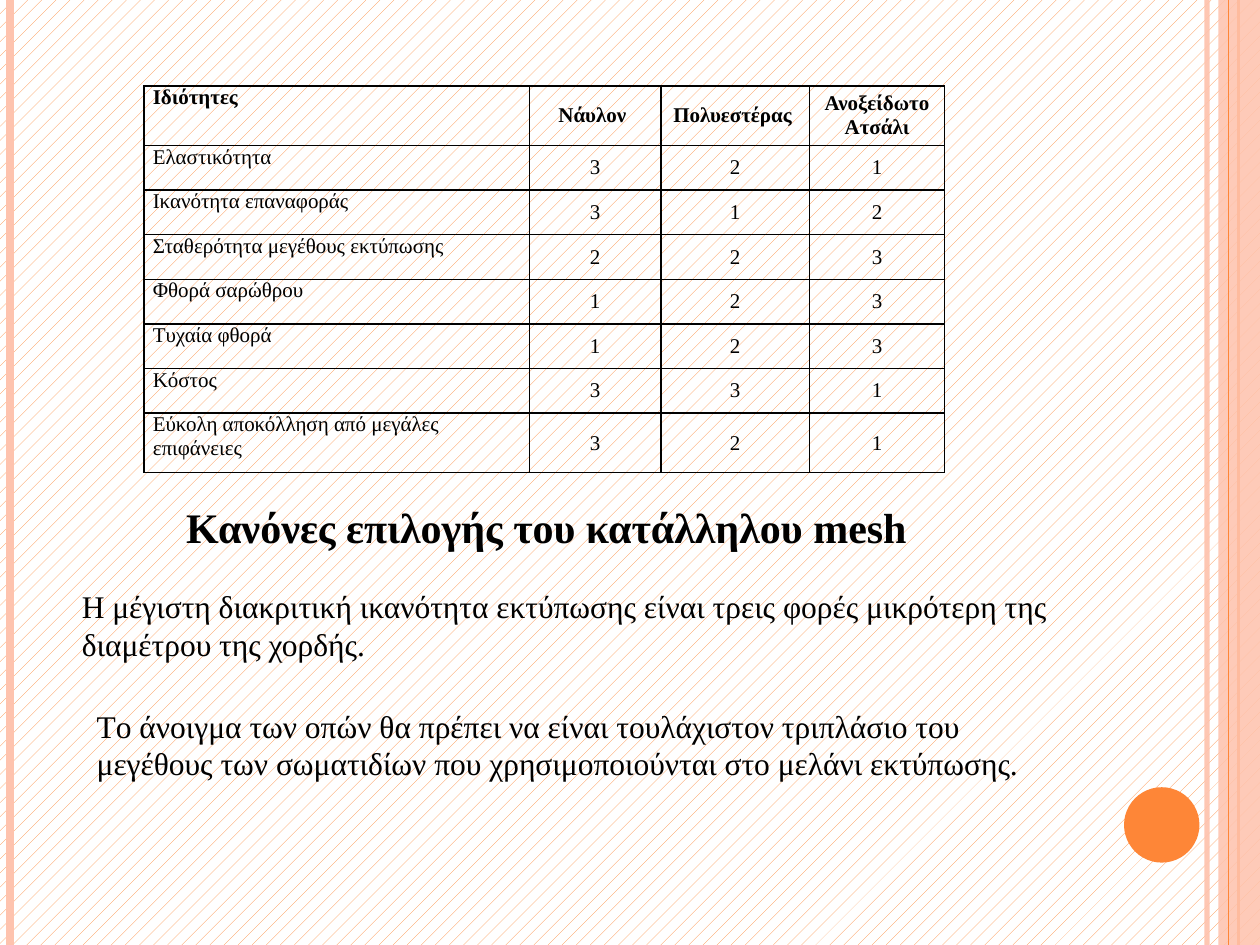
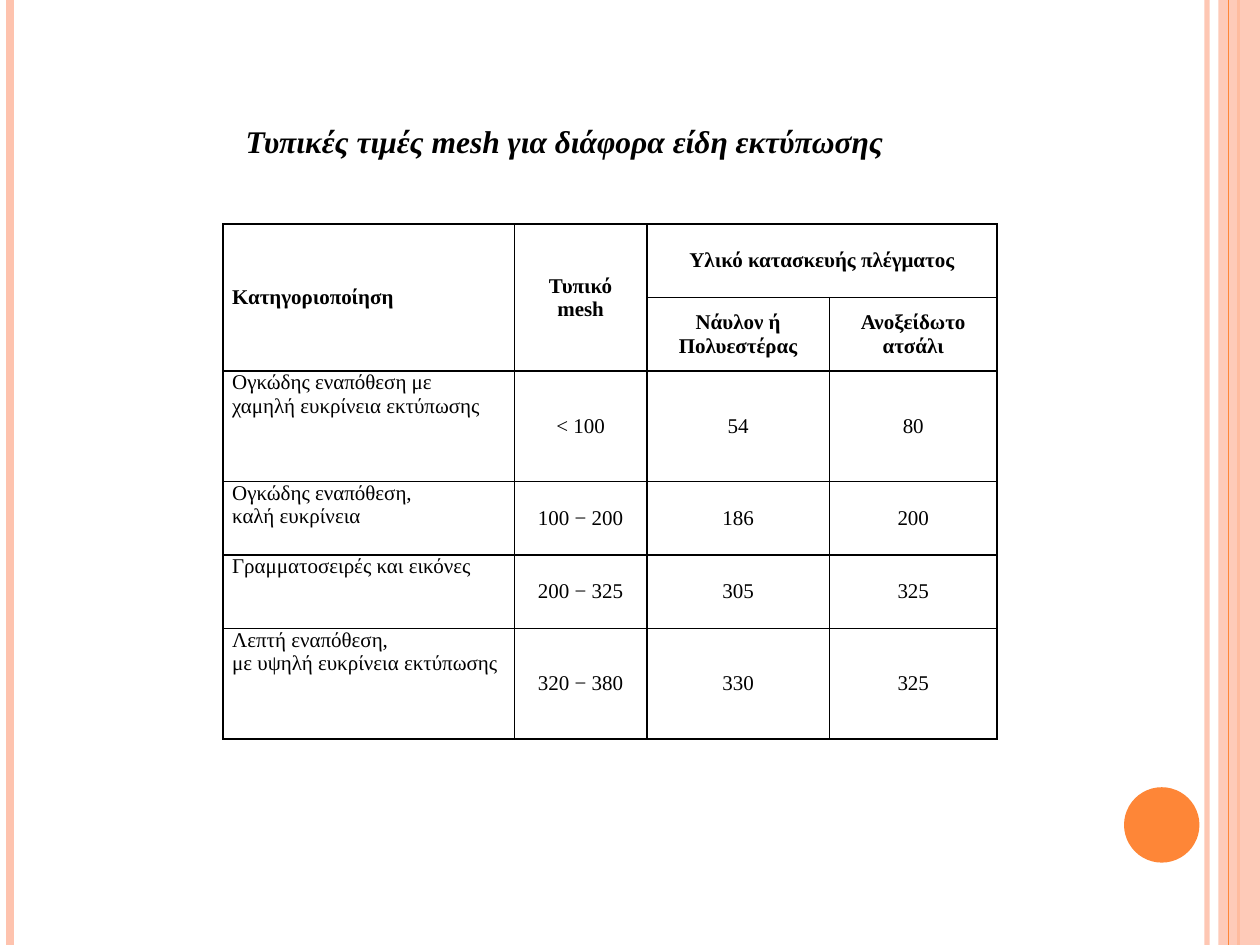
from pptx import Presentation
from pptx.dml.color import RGBColor
from pptx.enum.dml import MSO_PATTERN
from pptx.enum.shapes import MSO_CONNECTOR, MSO_SHAPE
from pptx.enum.text import MSO_ANCHOR, MSO_AUTO_SIZE, PP_ALIGN
from pptx.oxml.ns import qn
from pptx.util import Cm, Pt
from lxml.etree import SubElement

FONT = "Times New Roman"
BLACK = RGBColor(0x00, 0x00, 0x00)
WHITE = RGBColor(0xFF, 0xFF, 0xFF)
PEACH = RGBColor(0xFE, 0xC3, 0xAE)
ORANGE = RGBColor(0xFE, 0x86, 0x37)
WIDTH, HEIGHT = 25.4, 19.05
TITLE_ONLY = 5


class Deck:
    def __init__(self):
        self.prs = Presentation()
        self.prs.slide_width = Cm(WIDTH)
        self.prs.slide_height = Cm(HEIGHT)
        self.slide = None

    def page(self):
        self.slide = self.prs.slides.add_slide(self.prs.slide_layouts[TITLE_ONLY])
        self.rule(24.33, PEACH, 3, 93)
        self.rule(0.2, PEACH, 4.5)
        self.rule(24.97, ORANGE, 1.5)
        self.shape(MSO_SHAPE.RECTANGLE, 24.56, 0, 0.84, HEIGHT, PEACH, 87)
        self.rule(24.77, ORANGE, 0.75)
        self.shape(MSO_SHAPE.OVAL, 22.66, 15.87, 1.52, 1.52, ORANGE)

    def hatch(self):
        fill = self.slide.background.fill
        fill.patterned()
        fill.pattern = MSO_PATTERN.PERCENT_10
        fill.fore_color.rgb = ORANGE
        fill.back_color.rgb = WHITE

    def fade(self, item, alpha):
        if alpha < 100:
            color = next(item.iter(qn("a:srgbClr")))
            SubElement(color, qn("a:alpha"), val=str(alpha * 1000))

    def rule(self, left, color, width, alpha=100):
        line = self.slide.shapes.add_connector(
            MSO_CONNECTOR.STRAIGHT, Cm(left), 0, Cm(left), Cm(HEIGHT))
        line.line.color.rgb = color
        line.line.width = Pt(width)
        props = line._element.spPr
        self.fade(props, alpha)
        SubElement(props, qn("a:effectLst"))

    def shape(self, kind, left, top, width, height, color, alpha=100):
        shape = self.slide.shapes.add_shape(
            kind, Cm(left), Cm(top), Cm(width), Cm(height))
        shape.shadow.inherit = False
        shape.fill.solid()
        shape.fill.fore_color.rgb = color
        shape.line.fill.background()
        self.fade(shape._element.spPr, alpha)

    def style(self, frame, size, bold=False, italic=False, align=PP_ALIGN.LEFT):
        for para in frame.paragraphs:
            para.alignment = align
            for run in para.runs:
                font = run.font
                font.name, font.size = FONT, Pt(size)
                font.bold, font.italic = bold, italic
                font.color.rgb = BLACK

    def title(self, text, left, top, width, height, size, italic=False):
        title = self.slide.shapes.title
        title.left, title.top = Cm(left), Cm(top)
        title.width, title.height = Cm(width), Cm(height)
        frame = title.text_frame
        frame.text = text
        frame.word_wrap = False
        frame.auto_size = MSO_AUTO_SIZE.NONE
        frame.vertical_anchor = MSO_ANCHOR.TOP
        self.style(frame, size, True, italic)

    def text(self, text, left, top, width, height):
        box = self.slide.shapes.add_textbox(
            Cm(left), Cm(top), Cm(width), Cm(height))
        frame = box.text_frame
        frame.text = text
        frame.word_wrap = True
        self.style(frame, 18)

    def border(self, cell):
        props = cell._tc.get_or_add_tcPr()
        for spot, side in enumerate(("a:lnL", "a:lnR", "a:lnT", "a:lnB")):
            line = SubElement(props, qn(side), w=str(Pt(1)))
            fill = SubElement(line, qn("a:solidFill"))
            SubElement(fill, qn("a:srgbClr"), val=str(BLACK))
            props.insert(spot, line)

    def table(self, left, top, cols, rows, data, heads=1, spans=()):
        table = self.slide.shapes.add_table(
            len(rows), len(cols), Cm(left), Cm(top),
            Cm(sum(cols)), Cm(sum(rows))).table
        table.first_row = table.horz_banding = False
        for col, width in zip(table.columns, cols):
            col.width = Cm(width)
        for row, height in zip(table.rows, rows):
            row.height = Cm(height)
        for start, end in spans:
            table.cell(*start).merge(table.cell(*end))
        for r, line in enumerate(data):
            for c, text in enumerate(line):
                self.cell(table.cell(r, c), text, r < heads, c > 0)

    def cell(self, cell, text, bold, center):
        cell.fill.background()
        self.border(cell)
        cell.margin_left = cell.margin_right = Cm(0.18)
        cell.margin_top = cell.margin_bottom = 0
        middle = center or cell.is_merge_origin
        cell.vertical_anchor = MSO_ANCHOR.MIDDLE if middle else MSO_ANCHOR.TOP
        if text:
            cell.text_frame.text = text
            align = PP_ALIGN.CENTER if center else PP_ALIGN.LEFT
            self.style(cell.text_frame, 12, bold, align=align)


def rank(deck):
    deck.page()
    deck.hatch()
    deck.table(2.9, 1.73, (7.77, 2.65, 3, 2.72), (1.2, *[0.9] * 6, 1.2), (
        ("Ιδιότητες", "Νάυλον ", "Πολυεστέρας ", "Ανοξείδωτο Ατσάλι"),
        ("Ελαστικότητα", "3", "2", "1"),
        ("Ικανότητα επαναφοράς", "3", "1", "2"),
        ("Σταθερότητα μεγέθους εκτύπωσης", "2", "2", "3"),
        ("Φθορά σαρώθρου", "1", "2", "3"),
        ("Τυχαία φθορά", "1", "2", "3"),
        ("Κόστος", "3", "3", "1"),
        ("Εύκολη αποκόλληση από μεγάλες επιφάνειες", "3", "2", "1"),
    ))
    deck.title("Κανόνες επιλογής του κατάλληλου mesh", 3.5, 9.98, 15.19, 1.27, 24)
    deck.text("H μέγιστη διακριτική ικανότητα εκτύπωσης είναι τρεις φορές "
              "μικρότερη της διαμέτρου της χορδής.", 1.4, 11.71, 20.6, 1.8)
    deck.text("Tο άνοιγμα των οπών θα πρέπει να είναι τουλάχιστον τριπλάσιο του "
              "μεγέθους των σωματιδίων που χρησιμοποιούνται στο μελάνι "
              "εκτύπωσης.", 1.7, 14.12, 20.2, 1.8)


def mesh(deck):
    deck.page()
    deck.title("Τυπικές τιμές mesh για διάφορα είδη εκτύπωσης",
               4.7, 2.34, 13.51, 1.02, 18, True)
    low, high = 1.48, 2.23
    deck.table(4.5, 4.52, (5.87, 2.67, 3.68, 3.38),
               (low, low, high, low, low, high), (
        ("Κατηγοριοποίηση", "Τυπικό mesh", "Υλικό κατασκευής πλέγματος", None),
        (None, None, "Νάυλον ή Πολυεστέρας", "Ανοξείδωτο ατσάλι"),
        ("Ογκώδης εναπόθεση με\nχαμηλή ευκρίνεια εκτύπωσης", "< 100", "54", "80"),
        ("Ογκώδης εναπόθεση,\nκαλή ευκρίνεια", "100 − 200", "186", "200"),
        ("Γραμματοσειρές και εικόνες", "200 − 325", "305", "325"),
        ("Λεπτή εναπόθεση,\nμε υψηλή ευκρίνεια εκτύπωσης", "320 − 380", "330", "325"),
    ), 2, (((0, 0), (1, 0)), ((0, 1), (1, 1)), ((0, 2), (0, 3))))


def main():
    deck = Deck()
    rank(deck)
    mesh(deck)
    deck.prs.save("out.pptx")


if __name__ == "__main__":
    main()
